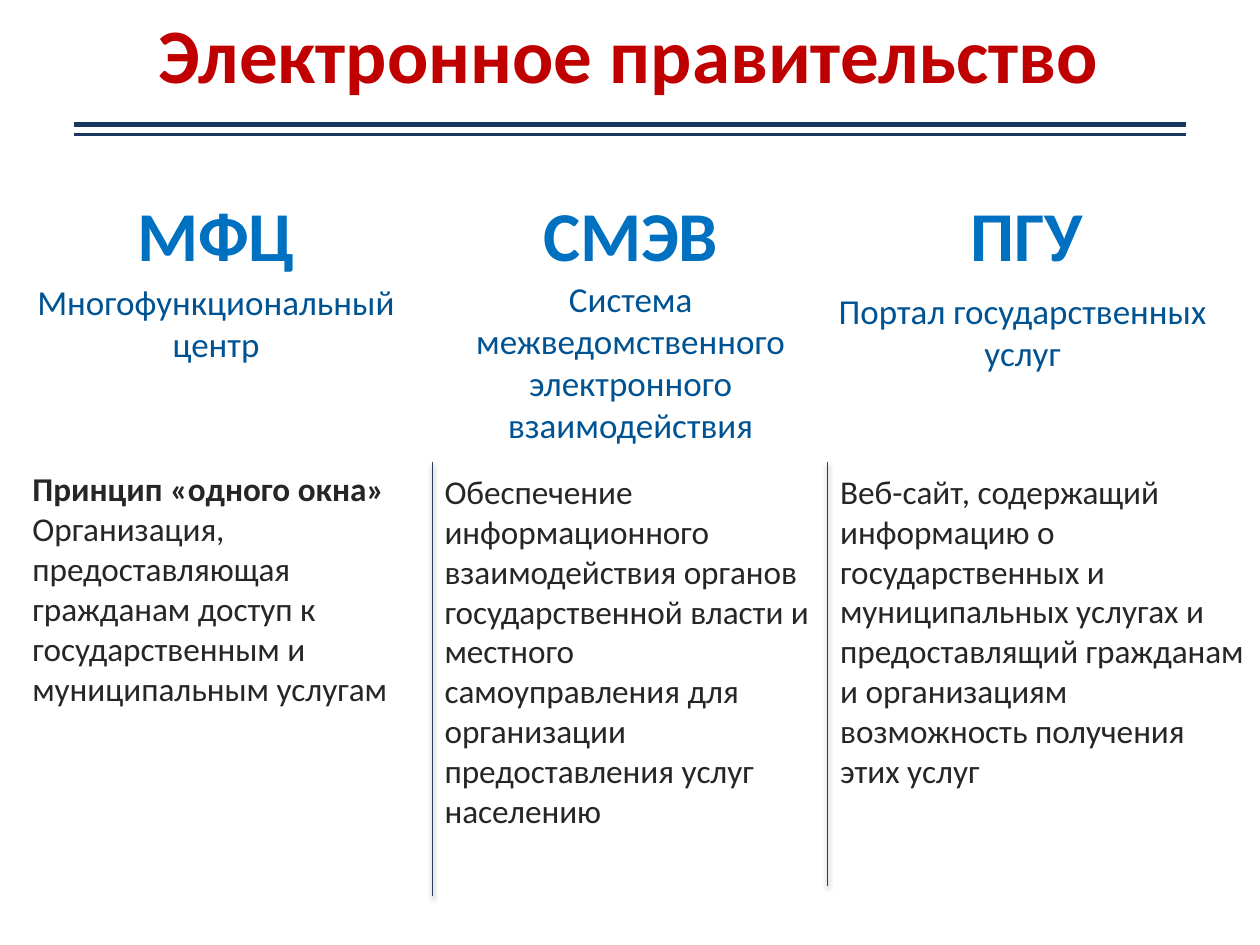
from lxml import etree
from pptx import Presentation
from pptx.dml.color import RGBColor
from pptx.enum.shapes import MSO_CONNECTOR
from pptx.enum.text import MSO_AUTO_SIZE, PP_ALIGN
from pptx.oxml.ns import qn
from pptx.util import Inches, Pt

LINE = MSO_CONNECTOR.STRAIGHT
LEFT, CENTER = PP_ALIGN.LEFT, PP_ALIGN.CENTER
FIT = MSO_AUTO_SIZE.SHAPE_TO_FIT_TEXT

THEME = {
    "font": "Calibri",
    # style: size, colour, bold, alignment
    "title": (44, "C00000", True, CENTER),
    "head": (40, "0070C0", True, CENTER),
    "name": (20, "005392", False, CENTER),
    "lead": (19, "262626", True, LEFT),
    "body": (19, "262626", False, LEFT),
    "rule": "17375E",
    "split": "254061",
}

TITLE = "Электронное правительство"
# Each part: left, top, width, height, then (style, text) paragraphs
COLUMNS = [
    [
        ((0, 1.47, 3.43, 0.77), [("head", "МФЦ")]),
        ((0, 2.18, 3.43, 0.77),
         [("name", "Многофункциональный"), ("name", "центр")]),
        ((0.16, 3.67, 3.27, 2.02), [
            ("lead", "Принцип «одного окна»"),
            ("body", "Организация, предоставляющая гражданам доступ к "
                     "государственным и муниципальным услугам")]),
    ],
    [
        ((3.43, 1.47, 3.15, 0.77), [("head", "СМЭВ")]),
        ((3.43, 2.15, 3.15, 1.45),
         [("name", "Система межведомственного электронного взаимодействия")]),
        ((3.43, 3.69, 3.15, 2.98), [
            ("body", "Обеспечение информационного взаимодействия органов "
                     "государственной власти и местного самоуправления для "
                     "организации предоставления услуг населению")]),
    ],
    [
        ((7.05, 1.47, 2.2, 0.77), [("head", "ПГУ")]),
        ((6.54, 2.25, 3.15, 0.77),
         [("name", "Портал государственных услуг")]),
        ((6.57, 3.69, 3.43, 2.66), [
            ("body", "Веб-сайт, содержащий информацию о государственных и "
                     "муниципальных услугах и предоставлящий гражданам и "
                     "организациям возможность получения этих услуг")]),
    ],
]
RULES = [(0.99, 3), (1.07, 1.5)]  # top, weight
SPLITS = [(3.43, 7.11), (6.57, 7.03)]  # left, bottom
MARGIN, SPLIT_TOP = 0.59, 3.67
WIDTH, HEIGHT = 10, 7.5


def add_text(slide, place, paras, wrap=True):
    box = slide.shapes.add_textbox(*map(Inches, place))
    frame = box.text_frame
    frame.word_wrap = wrap
    frame.auto_size = FIT
    for i, (style, text) in enumerate(paras):
        para = frame.add_paragraph() if i else frame.paragraphs[0]
        size, color, bold, align = THEME[style]
        para.text = text
        para.alignment = align
        font = para.font
        font.name, font.size, font.bold = THEME["font"], Pt(size), bold
        font.color.rgb = RGBColor.from_string(color)


def add_line(slide, ends, color, weight, shadow=False):
    line = slide.shapes.add_connector(LINE, *map(Inches, ends))
    line.line.color.rgb = RGBColor.from_string(color)
    line.line.width = Pt(weight)
    props = line._element.spPr
    effects = etree.SubElement(props, qn("a:effectLst"))
    if shadow:
        shade = etree.SubElement(
            effects, qn("a:outerShdw"), blurRad=str(Pt(3.1)),
            dist=str(Pt(1.8)), dir="5400000", rotWithShape="0")
        tint = etree.SubElement(shade, qn("a:srgbClr"), val="000000")
        etree.SubElement(tint, qn("a:alpha"), val="35000")


def main():
    deck = Presentation()
    deck.slide_width, deck.slide_height = Inches(WIDTH), Inches(HEIGHT)
    slide = deck.slides.add_slide(deck.slide_layouts[6])
    add_text(slide, (1.13, 0, 7.73, 0.84), [("title", TITLE)], wrap=False)
    for top, weight in RULES:
        add_line(slide, (MARGIN, top, WIDTH - MARGIN, top),
                 THEME["rule"], weight)
    for column in COLUMNS:
        for place, paras in column:
            add_text(slide, place, paras)
    for left, bottom in SPLITS:
        add_line(slide, (left, bottom, left, SPLIT_TOP),
                 THEME["split"], 0.75, shadow=True)
    deck.save("out.pptx")


if __name__ == "__main__":
    main()
